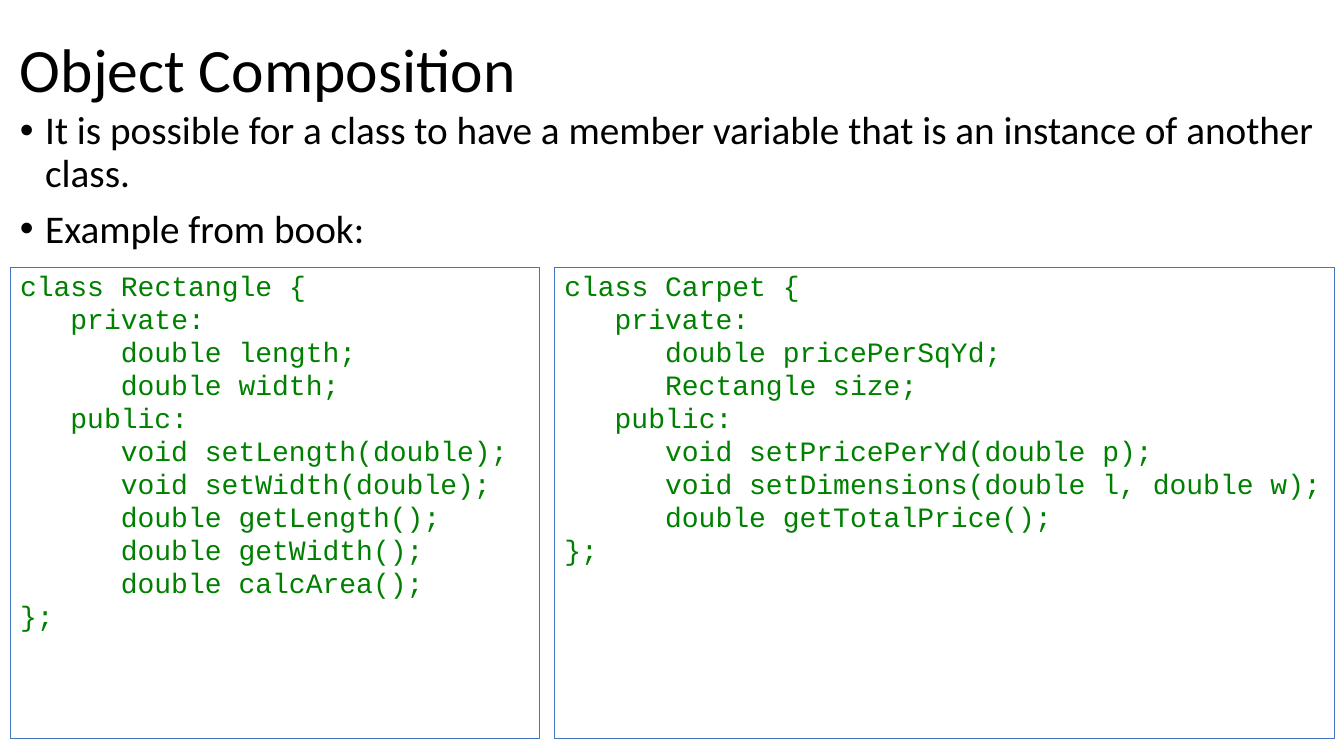
from pptx import Presentation
from pptx.dml.color import RGBColor
from pptx.enum.shapes import MSO_SHAPE
from pptx.enum.text import MSO_ANCHOR, PP_ALIGN
from pptx.oxml.ns import qn
from pptx.util import Pt
from lxml.etree import SubElement

BLACK = RGBColor(0x00, 0x00, 0x00)
GREEN = RGBColor(0x00, 0x80, 0x00)
BLUE = RGBColor(0x44, 0x72, 0xC4)

LEFT = 7.2
RIGHT = 953.3
CODE_TOP = 190.8
CODE_HEIGHT = 337
STEP = 36  # three characters of 20 pt Courier New

TITLE = "Object Composition"
POINTS = [
    "It is possible for a class to have a member variable that is an "
    "instance of another class.",
    "Example from book:",
]
# Each code line is its indent level and its text.
RECTANGLE = [
    (0, "class Rectangle {"),
    (1, "private:"),
    (2, "double length;"),
    (2, "double width;"),
    (1, "public:"),
    (2, "void setLength(double);"),
    (2, "void setWidth(double);"),
    (2, "double getLength();"),
    (2, "double getWidth();"),
    (2, "double calcArea();"),
    (0, "};"),
]
CARPET = [
    (0, "class Carpet {"),
    (1, "private:"),
    (2, "double pricePerSqYd;"),
    (2, "Rectangle size;"),
    (1, "public:"),
    (2, "void setPricePerYd(double p);"),
    (2, "void setDimensions(double l, double w);"),
    (2, "double getTotalPrice();"),
    (0, "};"),
]


def add_line(frame, index, text, size, font, color):
    """Write one paragraph, using the frame's empty first one for index 0."""
    para = frame.add_paragraph() if index else frame.paragraphs[0]
    para.alignment = PP_ALIGN.LEFT
    para.line_spacing = 0.9
    run = para.add_run()
    run.text = text
    run.font.size = Pt(size)
    run.font.name = font
    run.font.color.rgb = color
    return para


def set_indent(para, margin, first=0):
    props = para._p.get_or_add_pPr()
    props.set("marL", str(Pt(margin)))
    props.set("indent", str(Pt(first)))
    return props


def add_box(slide, left, top, width, height):
    box = slide.shapes.add_textbox(Pt(left), Pt(top), Pt(width), Pt(height))
    box.text_frame.word_wrap = True
    return box.text_frame


def add_title(slide, text):
    frame = add_box(slide, LEFT, 11.5, 875.5, 80)
    frame.vertical_anchor = MSO_ANCHOR.MIDDLE
    add_line(frame, 0, text, 44, "Calibri", BLACK)


def add_bullets(slide, points):
    frame = add_box(slide, LEFT, 75.6, RIGHT - LEFT, 428.4)
    for index, text in enumerate(points):
        para = add_line(frame, index, text, 28, "Calibri", BLACK)
        para.space_before = Pt(10)
        props = set_indent(para, 18, -18)
        SubElement(props, qn("a:buFont")).set("typeface", "Arial")
        SubElement(props, qn("a:buChar")).set("char", "•")


def add_code(slide, left, width, lines):
    box = slide.shapes.add_shape(
        MSO_SHAPE.RECTANGLE, Pt(left), Pt(CODE_TOP), Pt(width), Pt(CODE_HEIGHT)
    )
    box.shadow.inherit = False
    box.fill.background()
    box.line.color.rgb = BLUE
    box.line.width = Pt(0.75)
    frame = box.text_frame
    frame.word_wrap = True
    frame.vertical_anchor = MSO_ANCHOR.TOP
    for index, (level, text) in enumerate(lines):
        para = add_line(frame, index, text, 20, "Courier New", GREEN)
        para.space_after = Pt(2)
        set_indent(para, level * STEP)


def main():
    deck = Presentation()
    deck.slide_width, deck.slide_height = Pt(960), Pt(540)
    slide = deck.slides.add_slide(deck.slide_layouts[6])
    add_title(slide, TITLE)
    add_bullets(slide, POINTS)
    add_code(slide, LEFT, 378, RECTANGLE)
    add_code(slide, 396, RIGHT - 396, CARPET)
    deck.save("out.pptx")


if __name__ == "__main__":
    main()
